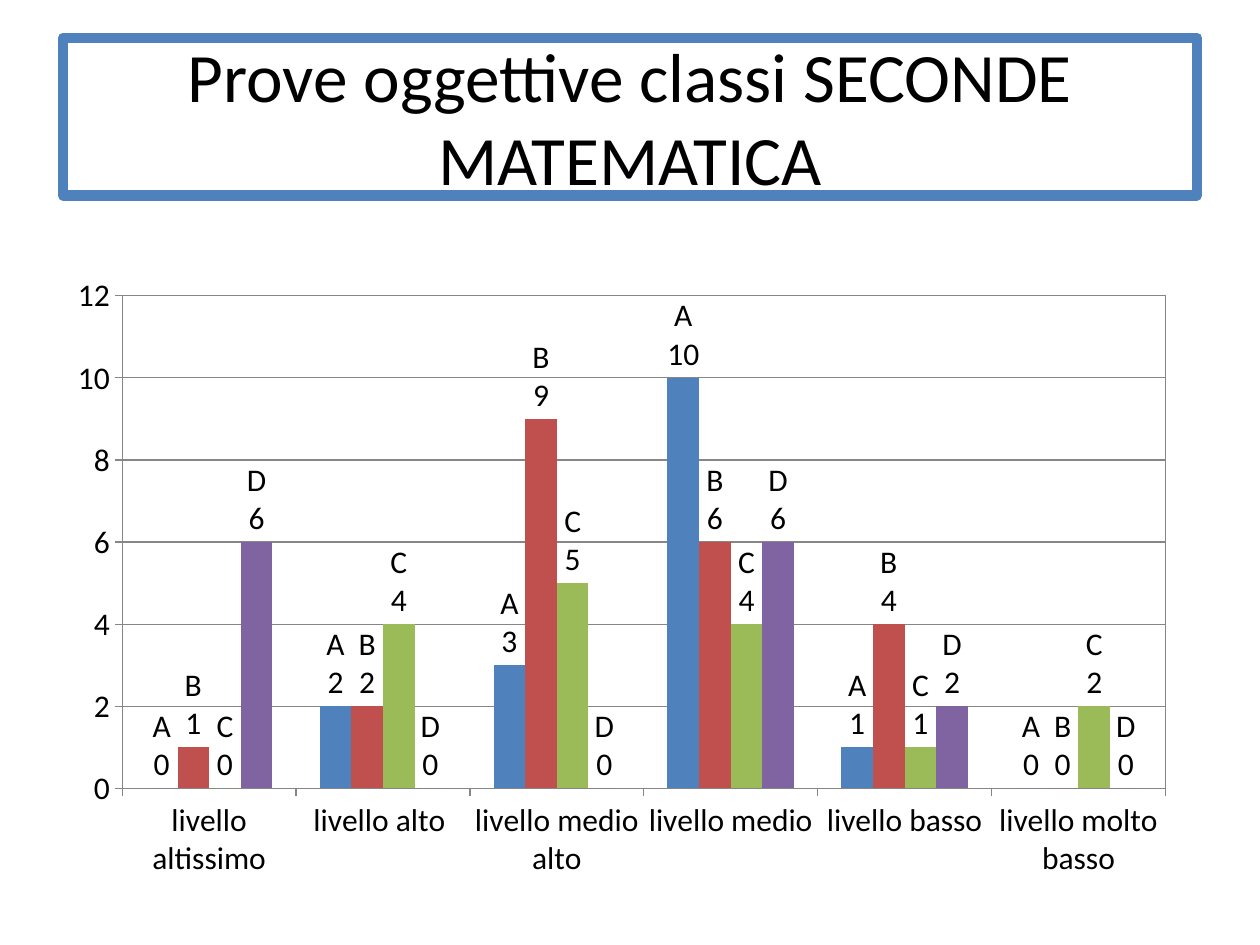
"""Build the slide of mathematics test results for the second-year classes."""
from lxml.etree import SubElement as Sub
from pptx import Presentation
from pptx.chart.data import CategoryChartData as Data
from pptx.dml.color import RGBColor as RGB
from pptx.enum.chart import XL_CHART_TYPE as Kind, XL_LABEL_POSITION as Spot, XL_TICK_MARK as Tick
from pptx.enum.shapes import MSO_SHAPE as Shape
from pptx.enum.text import MSO_ANCHOR as Anchor, PP_ALIGN as Align
from pptx.oxml import parse_xml
from pptx.oxml.ns import nsdecls, qn
from pptx.util import Inches, Pt

TITLE = "Prove oggettive classi SECONDE\vMATEMATICA"
LEVELS = ["livello altissimo", "livello alto ", "livello medio alto",
          "livello medio", "livello basso", "livello molto basso"]
BLACK = RGB(0, 0, 0)
GREY = RGB(0x86, 0x86, 0x86)
BLUE = RGB(0x4F, 0x81, 0xBD)
RED = RGB(0xC0, 0x50, 0x4D)
GREEN = RGB(0x9B, 0xBB, 0x59)
PURPLE = RGB(0x80, 0x64, 0xA2)
GROUPS = [
    ("A", BLUE, (0, 2, 3, 10, 1, 0)),
    ("B", RED, (1, 2, 9, 6, 4, 0)),
    ("C", GREEN, (0, 4, 5, 4, 1, 2)),
    ("D", PURPLE, (6, 0, 0, 6, 2, 0)),
]
PLOT = {"x": 0.06, "y": 0.05, "w": 0.92, "h": 0.79}


def style(font, size):
    font.name, font.size = "Calibri", Pt(size)
    font.color.rgb = BLACK


def add_title(slide):
    box = slide.shapes.add_shape(
        Shape.RECTANGLE, Inches(0.5), Inches(0.3), Inches(9), Inches(1.25))
    box.shadow.inherit = False
    box.fill.background()
    box.line.color.rgb, box.line.width = BLUE, Pt(6)
    Sub(box.line._get_or_add_ln(), qn("a:round"))
    frame = box.text_frame
    frame.word_wrap, frame.vertical_anchor = True, Anchor.MIDDLE
    par = frame.paragraphs[0]
    par.text, par.alignment = TITLE, Align.CENTER
    style(par.font, 39.6)


def set_plot(chart):
    area = chart._chartSpace.chart.plotArea
    for old in area.findall(qn("c:layout")):
        area.remove(old)
    layout = parse_xml(f"<c:layout {nsdecls('c')}/>")
    area.insert(0, layout)
    manual = Sub(layout, qn("c:manualLayout"))
    Sub(manual, qn("c:layoutTarget"), val="inner")
    for key in "xy":
        Sub(manual, qn(f"c:{key}Mode"), val="edge")
    for key, part in PLOT.items():
        Sub(manual, qn(f"c:{key}"), val=str(part))
    area.append(parse_xml(
        f"<c:spPr {nsdecls('c', 'a')}><a:noFill/><a:ln w='9525'><a:solidFill>"
        f"<a:srgbClr val='{GREY}'/></a:solidFill></a:ln></c:spPr>"))


def add_labels(series):
    labels = series.data_labels
    labels.show_value = labels.show_series_name = True
    labels.position = Spot.OUTSIDE_END
    style(labels.font, 18)
    mark = parse_xml(f"<c:separator {nsdecls('c')}>\n</c:separator>")
    labels._element.find(qn("c:showBubbleSize")).addnext(mark)


def add_bars(slide):
    data = Data()
    data.categories = LEVELS
    for name, _, vals in GROUPS:
        data.add_series(name, vals)
    chart = slide.shapes.add_chart(
        Kind.COLUMN_CLUSTERED, Inches(0.43), Inches(2.1),
        Inches(9), Inches(4.95), data).chart
    chart.has_legend = chart.has_title = False
    style(chart.font, 18)
    plot = chart.plots[0]
    plot.gap_width, plot.overlap = 150, 0
    plot.vary_by_categories = False
    for series, (_, color, _) in zip(plot.series, GROUPS):
        series.format.fill.solid()
        series.format.fill.fore_color.rgb = color
        add_labels(series)
    rise = chart.value_axis
    rise.minimum_scale, rise.maximum_scale, rise.major_unit = 0, 12, 2
    rise.has_major_gridlines = True
    for axis in (chart.category_axis, rise):
        axis.major_tick_mark, axis.minor_tick_mark = Tick.OUTSIDE, Tick.NONE
        style(axis.tick_labels.font, 18)
    for part in (chart.category_axis, rise, rise.major_gridlines):
        part.format.line.color.rgb = GREY
        part.format.line.width = Pt(0.75)
    set_plot(chart)


def main():
    deck = Presentation()
    deck.slide_width, deck.slide_height = Inches(10), Inches(7.5)
    slide = deck.slides.add_slide(deck.slide_layouts[6])
    add_title(slide)
    add_bars(slide)
    deck.save("out.pptx")


if __name__ == "__main__":
    main()
